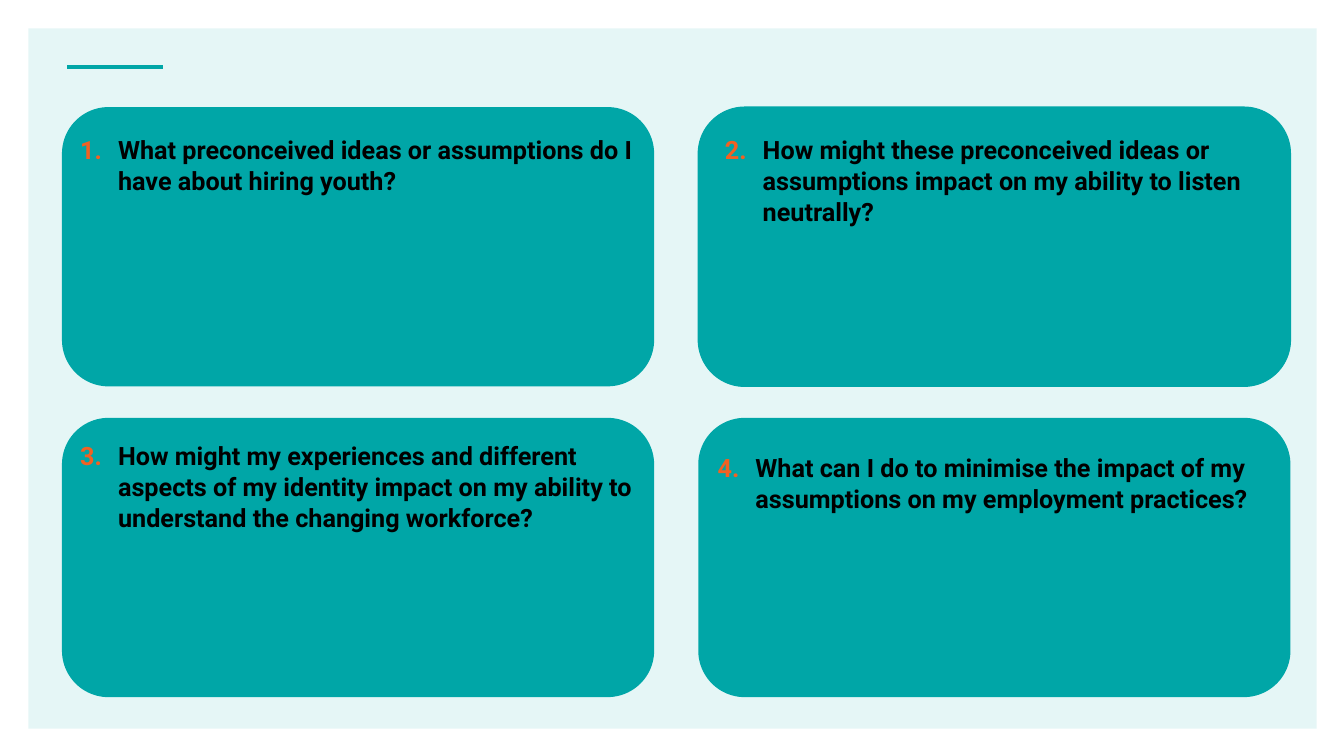
import lxml.etree
import pptx
import pptx.dml.color
import pptx.enum.shapes
import pptx.enum.text
import pptx.oxml.ns
import pptx.util

TEAL = pptx.dml.color.RGBColor(0x00, 0xA6, 0xA7)
MINT = pptx.dml.color.RGBColor(0xE5, 0xF6, 0xF6)
ORANGE = pptx.dml.color.RGBColor(0xF2, 0x61, 0x22)
BLACK = pptx.dml.color.RGBColor(0x00, 0x00, 0x00)
SHAPES = pptx.enum.shapes.MSO_SHAPE

CARD_LEFTS = (59, 665)
CARD_TOPS = (102, 398)
CARD_SIZE = (564, 266)

# Left, top, width, height and wording, in numbered order
QUESTIONS = (
    (67, 122, 555, 68, "What preconceived ideas or assumptions do I have about hiring youth?"),
    (681, 122, 576, 98, "How might these preconceived ideas or assumptions impact on my "
                        "ability to listen neutrally?"),
    (67, 414, 555, 98, "How might my experiences and different aspects of my identity impact "
                       "on my ability to understand the changing workforce?"),
    (674, 425, 555, 68, "What can I do to minimise the impact of my assumptions on my "
                        "employment practices?"),
)


def px(count):
    """Turn pixels, 96 to the inch, into EMU."""
    return pptx.util.Emu(count * 9525)


def add_element(parent, tag, **attributes):
    element = lxml.etree.SubElement(parent, pptx.oxml.ns.qn(tag))
    for name, value in attributes.items():
        element.set(name, str(value))
    return element


class SlideBuilder:
    font_name = "Roboto"

    def __init__(self, slide):
        self.slide = slide

    def panel(self, left, top, width, height, kind=SHAPES.RECTANGLE, fill=MINT):
        shape = self.slide.shapes.add_shape(kind, px(left), px(top), px(width), px(height))
        shape.shadow.inherit = False
        shape.fill.solid()
        shape.fill.fore_color.rgb = fill
        shape.line.fill.background()
        return shape

    def rule(self, left, top, right, color=TEAL, weight=3):
        line = self.slide.shapes.add_connector(
            pptx.enum.shapes.MSO_CONNECTOR.STRAIGHT, px(left), px(top), px(right), px(top))
        line.line.color.rgb = color
        line.line.width = pptx.util.Pt(weight)
        add_element(line._element.spPr, "a:effectLst")

    def numbered_text(self, left, top, width, height, text, number,
                      size=18, color=BLACK, bold=True, indent=36, tab=60):
        box = self.slide.shapes.add_textbox(px(left), px(top), px(width), px(height))
        frame = box.text_frame
        frame.word_wrap = True
        frame.auto_size = pptx.enum.text.MSO_AUTO_SIZE.SHAPE_TO_FIT_TEXT
        para = frame.paragraphs[0]
        para.line_spacing = 1.03
        properties = para._p.get_or_add_pPr()
        properties.set("marL", str(px(indent)))
        properties.set("indent", str(-px(indent)))
        bullet_color = add_element(properties, "a:buClr")
        add_element(bullet_color, "a:srgbClr", val=ORANGE)
        add_element(properties, "a:buAutoNum", type="arabicPeriod", startAt=number)
        tabs = add_element(properties, "a:tabLst")
        add_element(tabs, "a:tab", pos=px(tab), algn="l")
        span = para.add_run()
        span.text = text
        span.font.name = self.font_name
        span.font.size = pptx.util.Pt(size)
        span.font.bold = bold
        span.font.color.rgb = color


def main():
    deck = pptx.Presentation()
    deck.slide_width, deck.slide_height = px(1280), px(720)
    page = SlideBuilder(deck.slides.add_slide(deck.slide_layouts[6]))

    page.panel(27, 27, 1227, 667)
    page.rule(64, 64, 155)
    for top in CARD_TOPS:
        for left in CARD_LEFTS:
            card = page.panel(left, top, *CARD_SIZE, kind=SHAPES.ROUNDED_RECTANGLE, fill=TEAL)
            if (left, top) == (CARD_LEFTS[1], CARD_TOPS[0]):
                card.line.color.rgb = TEAL
                card.line.width = pptx.util.Pt(0.85)
    for number, (left, top, width, height, text) in enumerate(QUESTIONS, start=1):
        page.numbered_text(left, top, width, height, text, number)

    deck.save("out.pptx")


if __name__ == "__main__":
    main()
